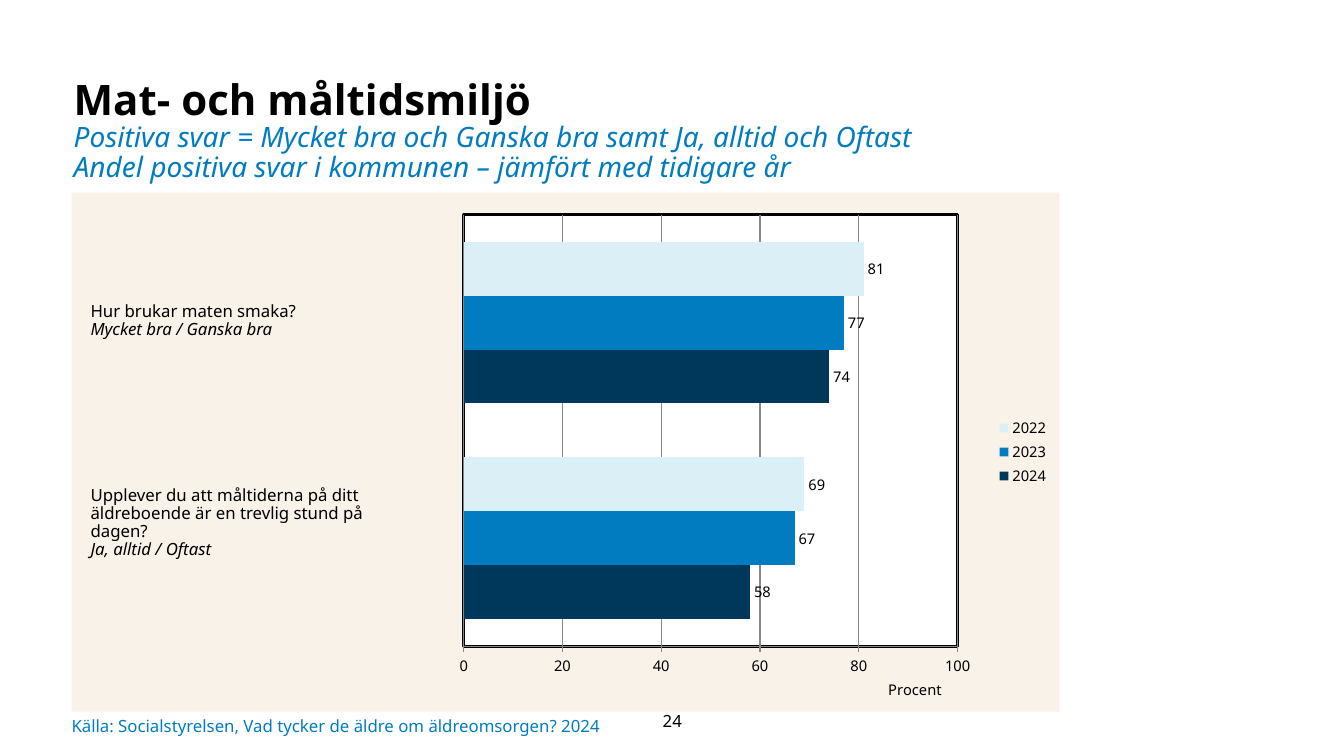
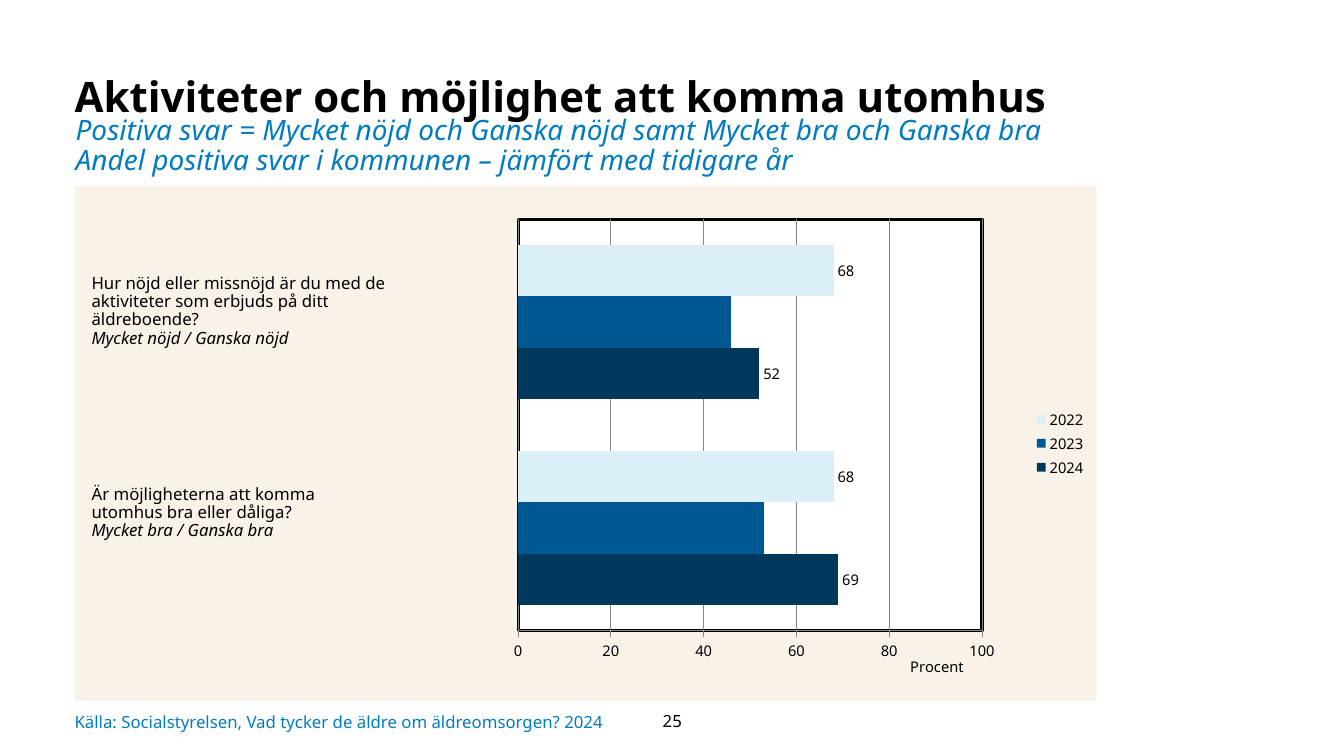
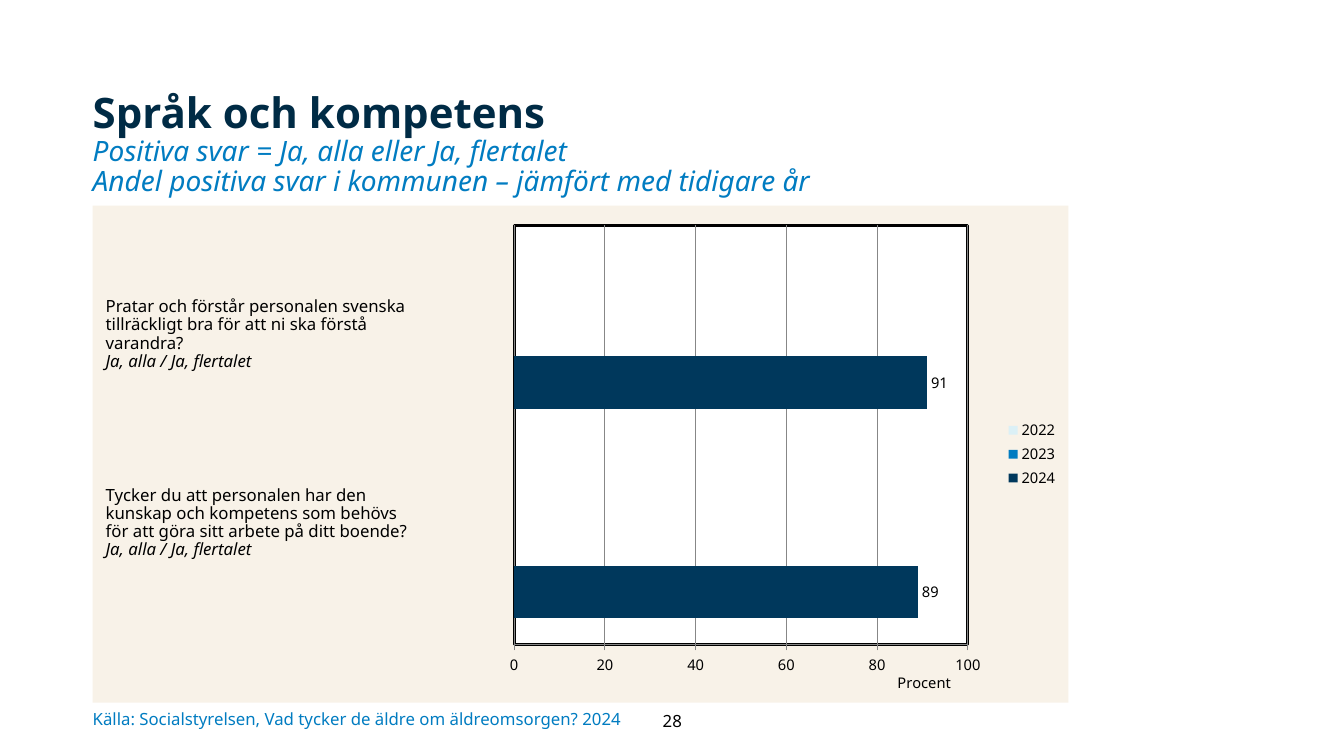
"""Build three slides of survey results on care for older people."""
import pptx
import pptx.chart.data
import pptx.dml.color
import pptx.enum.chart
import pptx.enum.text
import pptx.oxml
import pptx.oxml.ns
import pptx.util

Pt = pptx.util.Pt
FONT = "Noto Sans"
COLORS = {
    "black": "000000", "navy": "002B45", "blue": "017CC1", "steel": "005892",
    "dark": "00385C", "pale": "DBF0F6", "sand": "F8F2E8", "white": "FFFFFF",
    "grid": "878787",
}
TEXT_STYLES = {
    "title": {"size": Pt(30), "bold": True},
    "subtitle": {"size": Pt(20), "italic": True},
    "body": {"size": Pt(12)},
    "answer": {"size": Pt(12), "italic": True},
    "chart": {"size": Pt(10.5), "bold": False},
}
FRAME = {
    "word_wrap": True,
    "auto_size": pptx.enum.text.MSO_AUTO_SIZE.NONE,
    "vertical_anchor": pptx.enum.text.MSO_ANCHOR.TOP,
}
NO_MARGINS = {"margin_left": 0, "margin_top": 0, "margin_right": 0, "margin_bottom": 0}
MIDDLE = {"vertical_anchor": pptx.enum.text.MSO_ANCHOR.MIDDLE}
TIGHT = {"line_spacing": 0.9}
TREND = "Andel positiva svar i kommunen – jämfört med tidigare år"
SOURCE = "Källa: Socialstyrelsen, Vad tycker de äldre om äldreomsorgen? 2024"
NUMBER_BOX = (443.5, 500.4, 73.4, 28.8)

SLIDES = [
    {
        "title": "Mat- och måltidsmiljö",
        "title_box": (52.6, 49, 602, 39),
        "title_color": "black",
        "subtitle": "Positiva svar = Mycket bra och Ganska bra samt Ja, alltid och Oftast",
        "subtitle_box": (52.6, 87.8, 649, 47),
        "chart_box": (51.1, 137.5, 705.6, 370.8),
        "plot": (0.397, 0.043, 0.5, 0.831),
        "axis_title": (0.824, 0.93),
        "series": [("2024", (58, 74), "dark", True),
                   ("2023", (67, 77), "blue", True),
                   ("2022", (69, 81), "pale", True)],
        "questions": [
            ("Hur brukar maten smaka?", "Mycket bra / Ganska bra",
             (57.6, 213.1, 227.5, 36)),
            ("Upplever du att måltiderna på ditt äldreboende är en trevlig stund på dagen?",
             "Ja, alltid / Oftast", (57.6, 344.2, 226.8, 65.5)),
        ],
        "source_box": (51.1, 508.3, 425.5, 20.9),
        "number": "24",
    },
    {
        "title": "Aktiviteter och möjlighet att komma utomhus",
        "title_box": (53.3, 46.8, 718, 40.3),
        "title_color": "black",
        "subtitle": "Positiva svar = Mycket nöjd och Ganska nöjd samt Mycket bra och Ganska bra",
        "subtitle_box": (54, 82.8, 779, 47),
        "chart_box": (53.3, 132.7, 730, 368),
        "plot": (0.434, 0.065, 0.454, 0.799),
        "axis_title": (0.815, 0.906),
        "series": [("2024", (69, 52), "dark", True),
                   ("2023", (53, 46), "steel", False),
                   ("2022", (68, 68), "pale", True)],
        "questions": [
            ("Hur nöjd eller missnöjd är du med de aktiviteter som erbjuds på ditt äldreboende?",
             "Mycket nöjd / Ganska nöjd", (58.3, 193, 238.3, 65.5)),
            ("Är möjligheterna att komma utomhus bra eller dåliga?",
             "Mycket bra / Ganska bra", (58.3, 343.4, 226, 51)),
        ],
        "source_box": (53.3, 505.4, 425.5, 20.9),
        "number": "25",
    },
    {
        "title": "Språk och kompetens",
        "title_box": (66.2, 58.3, 602, 44),
        "title_color": "navy",
        "subtitle": "Positiva svar = Ja, alla eller Ja, flertalet",
        "subtitle_box": (66.2, 97.9, 557, 44),
        "chart_box": (66.2, 146.9, 697, 355),
        "plot": (0.432, 0.04, 0.465, 0.843),
        "axis_title": (0.822, 0.93),
        "series": [("2024", (89, 91), "dark", True),
                   ("2023", (None, None), "blue", True),
                   ("2022", (None, None), "pale", True)],
        "questions": [
            ("Pratar och förstår personalen svenska tillräckligt bra för att ni ska förstå varandra?",
             "Ja, alla / Ja, flertalet", (68.4, 209.5, 233.3, 65.5)),
            ("Tycker du att personalen har den kunskap och kompetens som behövs för att göra "
             "sitt arbete på ditt boende?",
             "Ja, alla / Ja, flertalet", (68.4, 344.2, 232.6, 65.5)),
        ],
        "source_box": (66.2, 502.6, 425.5, 20.9),
        "number": "28",
    },
]


def rgb(name):
    """Return the named colour."""
    return pptx.dml.color.RGBColor.from_string(COLORS[name])


def apply(target, values):
    """Set each attribute in a dict of format values."""
    for name, value in values.items():
        setattr(target, name, value)


def format_font(font, style, color="black"):
    """Give a font its family, style and colour."""
    apply(font, {"name": FONT, **TEXT_STYLES[style]})
    font.color.rgb = rgb(color)


def write_text(shape, lines, frame=None, paragraph_format=None):
    """Write (text, style, colour) lines as the paragraphs of a shape."""
    text_frame = shape.text_frame
    apply(text_frame, {**FRAME, **(frame or {})})
    for index, (text, style, color) in enumerate(lines):
        paragraph = text_frame.add_paragraph() if index else text_frame.paragraphs[0]
        apply(paragraph, {"alignment": pptx.enum.text.PP_ALIGN.LEFT, **(paragraph_format or {})})
        run = paragraph.add_run()
        run.text = text
        format_font(run.font, style, color)


def add_text(slide, box, lines, frame=None, paragraph_format=None):
    """Add a text box."""
    shape = slide.shapes.add_textbox(*map(Pt, box))
    write_text(shape, lines, frame, paragraph_format)


def place_title(slide, text, box, color):
    """Move and format the title placeholder."""
    title = slide.shapes.title
    apply(title, dict(zip(("left", "top", "width", "height"), map(Pt, box))))
    margins = {**NO_MARGINS, "margin_right": Pt(7.2), "margin_bottom": Pt(3.6)}
    write_text(title, [(text, "title", color)], margins, {"line_spacing": 1.1})


def set_layout(parent, index, target, values):
    """Give a chart part a manual layout as fractions of the chart."""
    for layout in parent.findall(pptx.oxml.ns.qn("c:layout")):
        parent.remove(layout)
    inner = f'<c:layoutTarget val="{target}"/>' if target else ""
    modes = '<c:xMode val="edge"/><c:yMode val="edge"/>'
    places = "".join(f'<c:{name} val="{value}"/>' for name, value in zip("xywh", values))
    parent.insert(index, pptx.oxml.parse_xml(
        f'<c:layout {pptx.oxml.ns.nsdecls("c")}><c:manualLayout>'
        f"{inner}{modes}{places}</c:manualLayout></c:layout>"))


def area_format(fill, line):
    """Return the fill and outline element of a chart area."""
    return pptx.oxml.parse_xml(
        f'<c:spPr {pptx.oxml.ns.nsdecls("c", "a")}><a:solidFill>'
        f'<a:srgbClr val="{COLORS[fill]}"/></a:solidFill>{line}</c:spPr>')


def format_areas(chart, plot):
    """Fill the chart and plot areas and place the plot."""
    chart_element = chart.element.find(pptx.oxml.ns.qn("c:chart"))
    plot_area = chart_element.find(pptx.oxml.ns.qn("c:plotArea"))
    set_layout(plot_area, 0, "inner", plot)
    border = (f'<a:ln w="{Pt(2.25)}"><a:solidFill><a:srgbClr val="{COLORS["black"]}"/>'
              "</a:solidFill></a:ln>")
    plot_area.append(area_format("white", border))
    chart_element.addnext(area_format("sand", "<a:ln><a:noFill/></a:ln>"))


def format_axes(chart, title_place):
    """Hide the category axis and format the percentage axis."""
    chart.category_axis.visible = False
    axis = chart.value_axis
    apply(axis, {
        "minimum_scale": 0, "maximum_scale": 100, "major_unit": 20,
        "has_major_gridlines": True,
        "major_tick_mark": pptx.enum.chart.XL_TICK_MARK.OUTSIDE,
    })
    for line in (axis.format.line, axis.major_gridlines.format.line):
        line.width = Pt(0.75)
        line.color.rgb = rgb("grid")
    format_font(axis.tick_labels.font, "chart")
    paragraph = axis.axis_title.text_frame.paragraphs[0]
    run = paragraph.add_run()
    run.text = "Procent"
    format_font(run.font, "chart")
    title = chart.element.find(".//" + pptx.oxml.ns.qn("c:valAx")).find(pptx.oxml.ns.qn("c:title"))
    set_layout(title, 1, "", title_place)


def format_series(series, color, labelled):
    """Colour a series and show its values if it is labelled."""
    series.format.fill.solid()
    series.format.fill.fore_color.rgb = rgb(color)
    if labelled:
        labels = series.data_labels
        apply(labels, {
            "show_value": True,
            "position": pptx.enum.chart.XL_LABEL_POSITION.OUTSIDE_END,
        })
        format_font(labels.font, "chart")


def add_bar_chart(slide, content):
    """Add the bar chart that compares the years."""
    data = pptx.chart.data.CategoryChartData()
    data.categories = ["1", "2"]
    for name, values, _, _ in content["series"]:
        data.add_series(name, values)
    chart = slide.shapes.add_chart(
        pptx.enum.chart.XL_CHART_TYPE.BAR_CLUSTERED,
        *map(Pt, content["chart_box"]), data).chart
    apply(chart, {"has_title": False, "has_legend": True})
    format_font(chart.font, "chart")
    apply(chart.legend, {
        "position": pptx.enum.chart.XL_LEGEND_POSITION.RIGHT, "include_in_layout": False})
    format_font(chart.legend.font, "chart")
    apply(chart.plots[0], {"gap_width": 100, "overlap": 0, "vary_by_categories": False})
    for series, (_, _, color, labelled) in zip(chart.plots[0].series, content["series"]):
        format_series(series, color, labelled)
    format_axes(chart, content["axis_title"])
    format_areas(chart, content["plot"])


def add_result_slide(presentation, content):
    """Add one slide with headings, chart, questions and footer."""
    slide = presentation.slides.add_slide(presentation.slide_layouts.get_by_name("Title Only"))
    place_title(slide, content["title"], content["title_box"], content["title_color"])
    subtitle = [(text, "subtitle", "blue") for text in (content["subtitle"], TREND)]
    add_text(slide, content["subtitle_box"], subtitle, NO_MARGINS, TIGHT)
    add_bar_chart(slide, content)
    for question, answer, box in content["questions"]:
        lines = [(question, "body", "black"), (answer, "answer", "black")]
        add_text(slide, box, lines, paragraph_format=TIGHT)
    add_text(slide, content["source_box"], [(SOURCE, "body", "blue")], {**NO_MARGINS, **MIDDLE})
    add_text(slide, NUMBER_BOX, [(content["number"], "body", "black")], MIDDLE,
             {"alignment": pptx.enum.text.PP_ALIGN.CENTER})


def main():
    """Build and save the presentation."""
    presentation = pptx.Presentation()
    apply(presentation, {"slide_width": Pt(960), "slide_height": Pt(540)})
    for content in SLIDES:
        add_result_slide(presentation, content)
    presentation.save("out.pptx")


if __name__ == "__main__":
    main()
